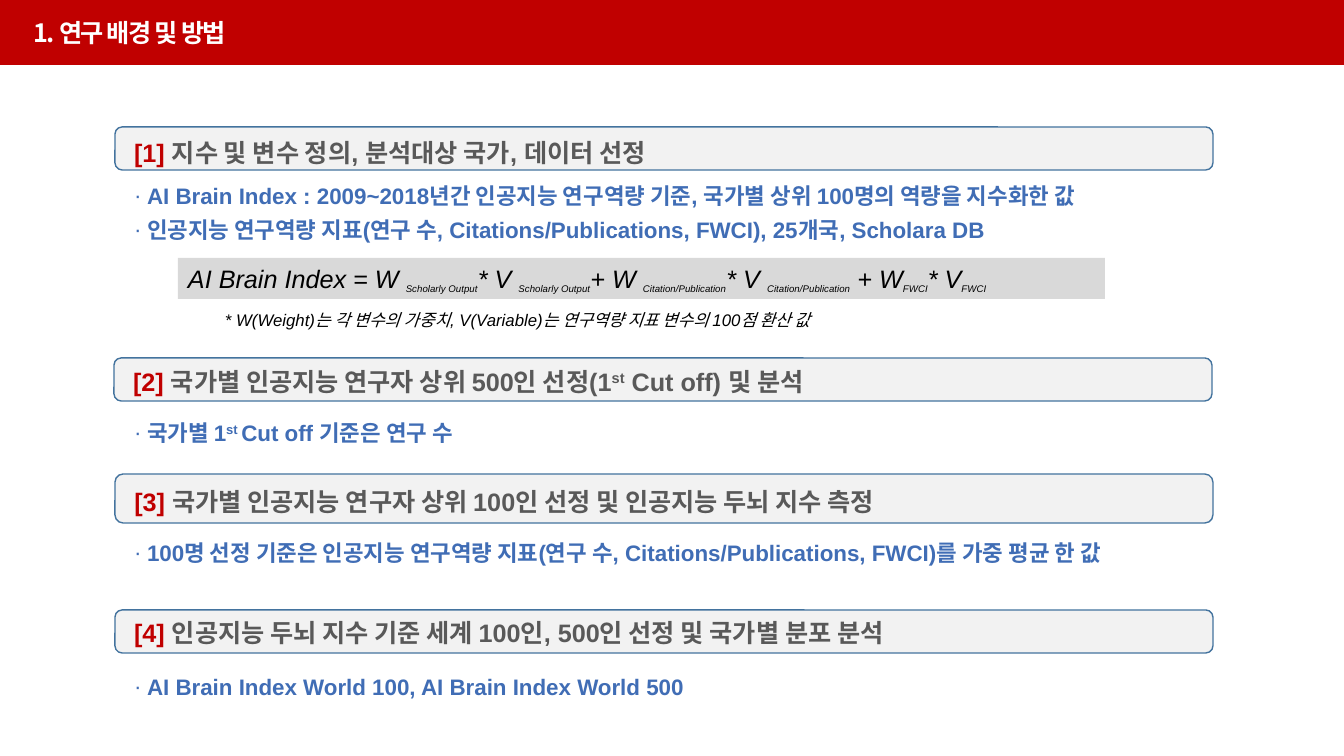
import lxml.etree
import pptx
import pptx.dml.color
import pptx.enum.shapes
import pptx.enum.text
import pptx.oxml.ns
import pptx.util

SHAPES = pptx.enum.shapes.MSO_SHAPE
ANCHOR = pptx.enum.text.MSO_ANCHOR
ALIGN = pptx.enum.text.PP_ALIGN
EMU_PER_PX = 914400 / 100.8

TITLE = {"size": 18, "bold": True, "color": "FFFFFF", "name": "Noto Sans CJK KR", "spc": -100}
NUMBER = {"size": 18, "bold": True, "color": "C00000"}
HEADING = {"size": 18, "bold": True, "color": "595959"}
POINT = {"size": 16, "bold": True, "color": "406DB5"}
FORMULA = {"size": 18, "italic": True, "color": "000000"}
SUBSCRIPT = {"size": 12, "italic": True, "color": "000000", "baseline": -25000}
NOTE = {"size": 12, "italic": True, "color": "000000"}
RAISED = {"baseline": 30000}

SECTIONS = [
    {
        "box": (115, 127, 1098, 43), "drop": 8, "list": (124, 174, 1100, 80),
        "heading": [("지수 및 변수 정의, 분석대상 국가, 데이터 선정", {})],
        "points": [
            [("AI Brain Index : 2009~2018년간 인공지능 연구역량 기준, 국가별 상위 100명의 역량을 지수화한 값", {})],
            [("인공지능 연구역량 지표(연구 수, Citations/Publications, FWCI), 25개국, Scholara DB", {})],
        ],
    },
    {
        "box": (114, 358, 1098, 43), "drop": 3, "list": (124, 414, 1100, 40),
        "heading": [("국가별 인공지능 연구자 상위 500인 선정(1", {}), ("st", RAISED),
                    (" Cut off) 및 분석", {})],
        "points": [[("국가별 1", {}), ("st ", RAISED), ("Cut off 기준은 연구 수", {})]],
    },
    {
        "box": (115, 474, 1098, 49), "drop": 5, "list": (124, 534, 1100, 40),
        "heading": [("국가별 인공지능 연구자 상위 100인 선정 및 인공지능 두뇌 지수 측정", {})],
        "points": [[("100명 선정 기준은 인공지능 연구역량 지표(연구 수, Citations/Publications, FWCI)를 가중 평균 한 값", {})]],
    },
    {
        "box": (115, 610, 1098, 43), "drop": 2, "list": (124, 668, 1100, 40),
        "heading": [("인공지능 두뇌 지수 기준 세계 100인, 500인 선정 및 국가별 분포 분석", {})],
        "points": [[("AI Brain Index World 100, AI Brain Index World 500", {})]],
    },
]

EQUATION = [
    ("AI Brain Index = W ", FORMULA), ("Scholarly Output", SUBSCRIPT),
    ("* V ", FORMULA), ("Scholarly Output", SUBSCRIPT),
    ("+ W ", FORMULA), ("Citation/Publication", SUBSCRIPT),
    ("* V ", FORMULA), ("Citation/Publication", SUBSCRIPT),
    (" + W", FORMULA), ("FWCI", SUBSCRIPT),
    ("* V", FORMULA), ("FWCI", SUBSCRIPT),
]


def px(length):
    return pptx.util.Emu(round(length * EMU_PER_PX))


def rgb(code):
    return pptx.dml.color.RGBColor.from_string(code)


def assign(target, values):
    for key, value in values.items():
        setattr(target, key, value)


class SlideBuilder:
    font = "Arial"

    def __init__(self, slide):
        self.slide = slide

    def place(self, part, box):
        assign(part, dict(zip(("left", "top", "width", "height"), map(px, box))))

    def frame(self, part, left=10, top=0, wrap=True):
        assign(part.text_frame, {
            "word_wrap": wrap, "vertical_anchor": ANCHOR.MIDDLE,
            "auto_size": pptx.enum.text.MSO_AUTO_SIZE.NONE,
            "margin_left": px(left), "margin_right": px(10),
            "margin_top": px(top), "margin_bottom": 0,
        })
        return part.text_frame

    def fill_paragraph(self, paragraph, runs, spacing=1.0, before=0):
        assign(paragraph, {"alignment": ALIGN.LEFT, "line_spacing": spacing,
                           "space_before": pptx.util.Pt(before)})
        for words, style in runs:
            run = paragraph.add_run()
            run.text = words
            face = style.get("name", self.font)
            assign(run.font, {"name": face, "size": pptx.util.Pt(style["size"]),
                              "bold": style.get("bold", False),
                              "italic": style.get("italic", False)})
            run.font.color.rgb = rgb(style["color"])
            properties = run._r.get_or_add_rPr()
            for key in ("baseline", "spc"):
                if key in style:
                    properties.set(key, str(style[key]))
            if face != self.font:
                east_asian = lxml.etree.SubElement(properties, pptx.oxml.ns.qn("a:ea"))
                east_asian.set("typeface", face)

    def title(self, words, box):
        band = self.slide.shapes.title
        self.place(band, box)
        band.fill.solid()
        band.fill.fore_color.rgb = rgb("C00000")
        self.fill_paragraph(self.frame(band, left=33).paragraphs[0], [(words, TITLE)])

    def panel(self, kind, box, fill, runs, line=None, **margins):
        panel = self.slide.shapes.add_shape(kind, *map(px, box))
        panel.shadow.inherit = False
        panel.fill.solid()
        panel.fill.fore_color.rgb = rgb(fill)
        if line:
            panel.line.color.rgb = rgb(line)
            panel.line.width = pptx.util.Pt(1)
        else:
            panel.line.fill.background()
        self.fill_paragraph(self.frame(panel, **margins).paragraphs[0], runs)

    def bullets(self, body, box, points):
        self.place(body, box)
        frame = self.frame(body)
        for index, runs in enumerate(points):
            paragraph = frame.add_paragraph() if index else frame.paragraphs[0]
            properties = paragraph._p.get_or_add_pPr()
            properties.set("marL", str(px(13)))
            properties.set("indent", str(-px(13)))
            for tag, key, value in (("a:buFont", "typeface", self.font), ("a:buChar", "char", "·")):
                lxml.etree.SubElement(properties, pptx.oxml.ns.qn(tag)).set(key, value)
            self.fill_paragraph(paragraph, [(words, POINT | extra) for words, extra in runs],
                                spacing=0.9, before=7 if index else 0)

    def note(self, words, box):
        note = self.slide.shapes.add_textbox(*map(px, box))
        self.fill_paragraph(self.frame(note, wrap=False).paragraphs[0], [(words, NOTE)])


def main():
    deck = pptx.Presentation()
    assign(deck, {"slide_width": px(1344), "slide_height": px(756)})
    slide = deck.slides.add_slide(deck.slide_layouts.get_by_name("Comparison"))
    builder = SlideBuilder(slide)
    builder.title("1. 연구 배경 및 방법", (0, 0, 1344, 65))
    bodies = list(slide.placeholders)[1:]
    for number, (section, body) in enumerate(zip(SECTIONS, bodies), 1):
        heading = [(words, HEADING | extra) for words, extra in section["heading"]]
        builder.panel(SHAPES.ROUNDED_RECTANGLE, section["box"], "F2F2F2",
                      [(f"[{number}] ", NUMBER)] + heading,
                      line="43739E", left=17, top=section["drop"])
        builder.bullets(body, section["list"], section["points"])
    builder.panel(SHAPES.RECTANGLE, (178, 258, 927, 41), "D9D9D9", EQUATION, wrap=False)
    builder.note("* W(Weight)는 각 변수의 가중치, V(Variable)는 연구역량 지표 변수의 100점 환산 값",
                 (215, 305, 674, 30))
    deck.save("out.pptx")


if __name__ == "__main__":
    main()
